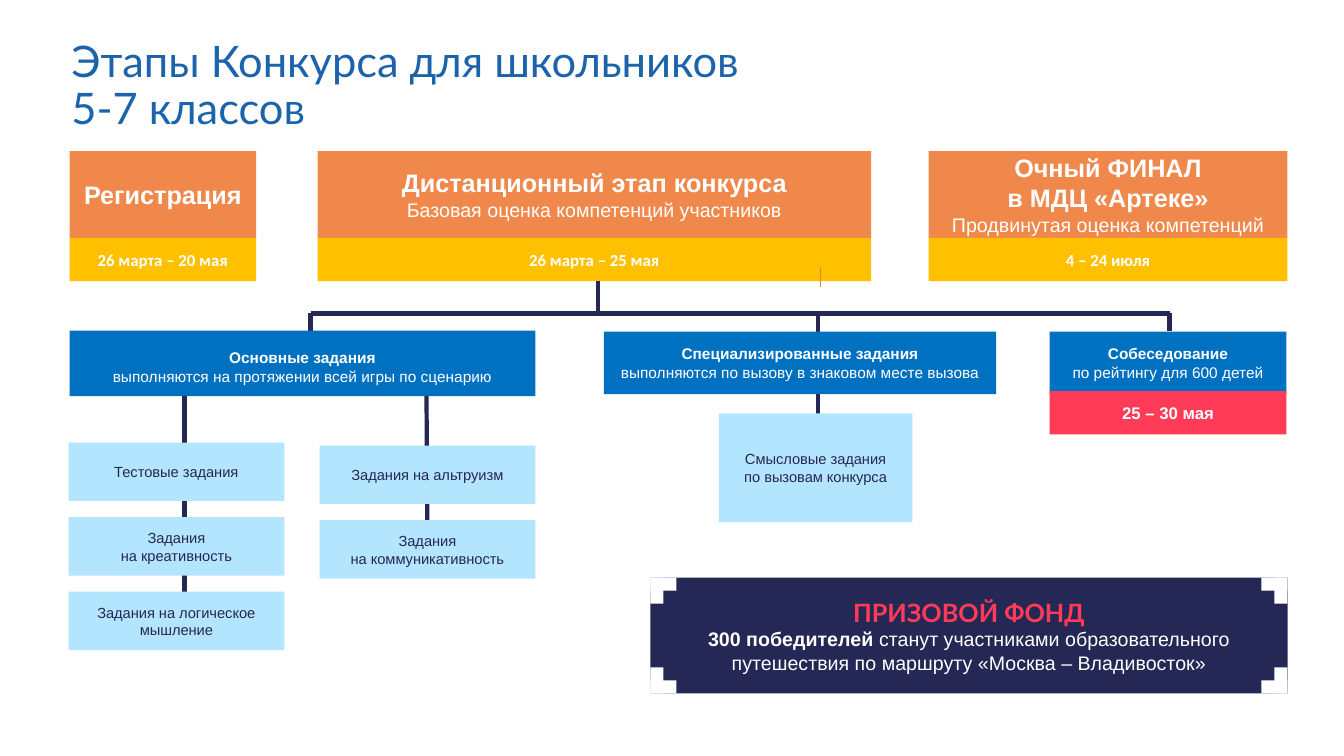
from dataclasses import dataclass

from lxml import etree
from pptx import Presentation
from pptx.dml.color import RGBColor
from pptx.enum.shapes import MSO_CONNECTOR as Connector, MSO_SHAPE as Preset
from pptx.enum.text import MSO_ANCHOR as Anchor, PP_ALIGN as Align
from pptx.oxml.ns import qn
from pptx.util import Inches, Pt


@dataclass(frozen=True)
class Style:
    font: str
    size: float
    color: str
    bold: bool = False


THEME = {
    "stage": "F1884B", "dates": "FFC000", "task": "0070C0", "leaf": "B4E5FE",
    "navy": "252754", "red": "FF3B57", "white": "FFFFFF", "tick": "ED7D31",
    "title": Style("Lato", 31, "1B63AB"),
    "stage_name": Style("Arial", 18, "FFFFFF", True),
    "stage_note": Style("Arial", 14, "FFFFFF"),
    "stage_dates": Style("Calibri", 12, "FFFFFF", True),
    "interview_dates": Style("Arial", 12, "FFFFFF", True),
    "task_name": Style("Arial", 11, "FFFFFF", True),
    "task_note": Style("Arial", 11, "FFFFFF"),
    "leaf_name": Style("Arial", 10.5, "252754"),
    "prize_name": Style("Lato", 18, "FF3B57", True),
}

TITLE = ["Этапы Конкурса для школьников", "5-7 классов"]
STAGES = [
    (0.69, 1.85, ["Регистрация"], None, "26 марта – 20 мая"),
    (3.15, 5.49, ["Дистанционный этап конкурса"],
     "Базовая оценка компетенций участников", "26 марта – 25 мая"),
    (9.21, 3.56, ["Очный ФИНАЛ", "в МДЦ «Артеке»"],
     "Продвинутая оценка компетенций", "4 – 24 июля"),
]
TASKS = [
    ((0.69, 3.28, 4.62, 0.65), "Основные задания",
     "выполняются на протяжении всей игры по сценарию", 0.12),
    ((5.99, 3.29, 3.89, 0.62), "Специализированные задания",
     "выполняются по вызову в знаковом месте вызова", 0.05),
    ((10.41, 3.29, 2.35, 0.62), "Собеседование",
     "по рейтингу для 600 детей", 0.05),
]
INTERVIEW_DATES = "25 – 30 мая"
CHALLENGE = ["Смысловые задания", "по вызовам конкурса"]
LEAF_COLUMNS = [
    (0.68, 4.39, [["Тестовые задания"], ["Задания", "на креативность"],
                  ["Задания на логическое мышление"]]),
    (3.17, 4.42, [["Задания на альтруизм"], ["Задания", "на коммуникативность"]]),
]
PRIZE_NAME = "ПРИЗОВОЙ ФОНД"
PRIZE_RUNS = [("300 победителей ", True),
              ("станут участниками образовательного путешествия "
               "по маршруту «Москва – Владивосток»", False)]

STAGE_TOP, DATES_TOP, STRIP_HEIGHT = 1.5, 2.36, 0.43
STAGE_HEIGHT = DATES_TOP - STAGE_TOP
LEAF_WIDTH, LEAF_HEIGHT, LEAF_STEP = 2.14, 0.58, 0.74
BUS_Y, BUS_LEFT, BUS_RIGHT = 3.11, 3.08, 11.6
BRANCHES = [
    (BUS_LEFT, BUS_Y, BUS_RIGHT, BUS_Y),
    (5.93, 2.79, 5.93, BUS_Y),
    (BUS_LEFT, BUS_Y, BUS_LEFT, 3.28),
    (BUS_RIGHT, BUS_Y, BUS_RIGHT, 3.28),
    (8.11, BUS_Y, 8.11, 4.46),
    (1.83, 3.9, 1.83, 6.11),
    (4.23, 3.9, 4.24, 5.52),
]
TICK = (8.14, 2.65, 8.14, 2.85)
PRIZE = (6.45, 5.73, 6.32, 1.15)
NOTCH_LONG, NOTCH_SHORT = 0.26, 0.13

deck = Presentation()
deck.slide_width, deck.slide_height = Inches(13.33), Inches(7.5)
slide = deck.slides.add_slide(deck.slide_layouts[6])


def set_font(font, style):
    font.name, font.size, font.bold = style.font, Pt(style.size), style.bold
    font.color.rgb = RGBColor.from_string(style.color)


def write(frame, lines, align=Align.CENTER):
    frame.word_wrap = True
    for index, (text, style) in enumerate(lines):
        paragraph = frame.paragraphs[0] if index == 0 else frame.add_paragraph()
        paragraph.alignment = align
        paragraph.add_run().text = text
        set_font(paragraph.font, THEME[style])


def card(bounds, fill, lines=(), inset_top=0.05, inset_bottom=0.05):
    box = slide.shapes.add_shape(Preset.RECTANGLE, *map(Inches, bounds))
    box.shadow.inherit = False
    box.fill.solid()
    box.fill.fore_color.rgb = RGBColor.from_string(THEME[fill])
    box.line.fill.background()
    box.text_frame.vertical_anchor = Anchor.MIDDLE
    box.text_frame.margin_top = Inches(inset_top)
    box.text_frame.margin_bottom = Inches(inset_bottom)
    write(box.text_frame, lines)
    return box


def branch(ends, color="navy", width=3):
    line = slide.shapes.add_connector(Connector.STRAIGHT, *map(Inches, ends))
    line.line.color.rgb = RGBColor.from_string(THEME[color])
    line.line.width = Pt(width)
    etree.SubElement(line._element.spPr, qn("a:effectLst"))


heading = slide.shapes.add_textbox(*map(Inches, (0.61, 0.35, 10.35, 1.47)))
write(heading.text_frame, [(line, "title") for line in TITLE], Align.LEFT)
for paragraph in heading.text_frame.paragraphs:
    paragraph.line_spacing = 0.9

for left, width, names, note, dates in STAGES:
    lines = [(name, "stage_name") for name in names]
    if note:
        lines.append((note, "stage_note"))
    card((left, STAGE_TOP, width, STAGE_HEIGHT), "stage", lines, 0, 0)
    card((left, DATES_TOP, width, STRIP_HEIGHT), "dates", [(dates, "stage_dates")])

for ends in BRANCHES:
    branch(ends)
branch(TICK, "tick", 0.5)

for bounds, name, note, inset_top in TASKS:
    card(bounds, "task", [(name, "task_name"), (note, "task_note")], inset_top)
card((10.41, 3.88, 2.35, STRIP_HEIGHT), "red", [(INTERVIEW_DATES, "interview_dates")])
card((7.13, 4.1, 1.92, 1.08), "leaf", [(line, "leaf_name") for line in CHALLENGE])

for left, top, leaves in LEAF_COLUMNS:
    for row, names in enumerate(leaves):
        card((left, top + row * LEAF_STEP, LEAF_WIDTH, LEAF_HEIGHT), "leaf",
             [(name, "leaf_name") for name in names])

prize = card(PRIZE, "navy", [(PRIZE_NAME, "prize_name")])
winners = prize.text_frame.add_paragraph()
winners.alignment = Align.CENTER
for text, bold in PRIZE_RUNS:
    run = winners.add_run()
    run.text, run.font.bold = text, bold
set_font(winners.font, THEME["stage_note"])

prize_left, prize_top, prize_width, prize_height = PRIZE
for at_right in (0, 1):
    for at_bottom in (0, 1):
        for width, height in ((NOTCH_LONG, NOTCH_SHORT), (NOTCH_SHORT, NOTCH_LONG)):
            card((prize_left + at_right * (prize_width - width),
                  prize_top + at_bottom * (prize_height - height), width, height), "white")

deck.save("out.pptx")
